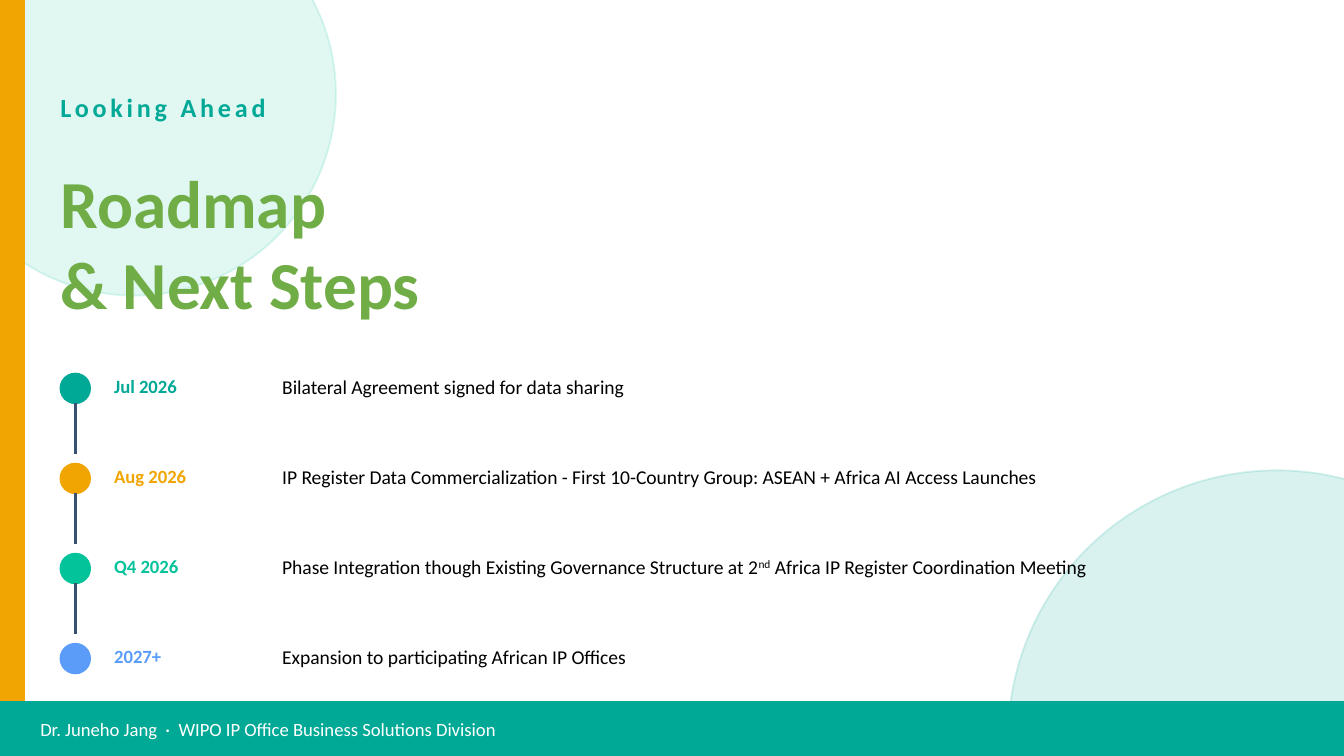
"""Build the roadmap and next steps slide."""
from lxml import etree
from pptx import Presentation
from pptx import util as u
from pptx.dml.color import RGBColor
from pptx.enum import shapes, text
from pptx.oxml.ns import qn

COLORS = {
    "teal": "00A896", "mint": "02C39A", "amber": "F0A500", "blue": "5A9CF8",
    "green": "70AD47", "slate": "3A5070", "black": "000000", "white": "FFFFFF",
}
FONT = "Calibri"
WIDTH, HEIGHT = 720, 405
LEFT = 32.4
DOT = 15.84
FIRST_ROW, ROW_STEP, ROW_HEIGHT = 194.4, 48.24, 25.2
MILESTONES = [
    ("Jul 2026", "teal", [("Bilateral Agreement signed for data sharing", 0)]),
    ("Aug 2026", "amber", [("IP Register Data Commercialization - First 10-Country Group: "
                            "ASEAN + Africa AI Access Launches", 0)]),
    ("Q4 2026", "mint", [("Phase Integration though Existing Governance Structure at 2", 0),
                         ("nd", 30),
                         (" Africa IP Register Coordination Meeting", 0)]),
    ("2027+", "blue", [("Expansion to participating African IP Offices", 0)]),
]


def rgb(color):
    return RGBColor.from_string(COLORS[color])


def add_filled(slide, kind, box, color, opacity=100):
    shape = slide.shapes.add_shape(kind, *map(u.Pt, box))
    shape.shadow.inherit = False
    shape.fill.solid()
    shape.fill.fore_color.rgb = rgb(color)
    shape.line.color.rgb = rgb(color)
    shape.line.width = u.Pt(1)
    if opacity < 100:
        for color_element in shape._element.spPr.iter(qn("a:srgbClr")):
            etree.SubElement(color_element, qn("a:alpha"), val=str(opacity * 1000))


def add_text(slide, box, paragraphs, size, color, bold=False, spacing=0):
    frame = slide.shapes.add_textbox(*map(u.Pt, box)).text_frame
    frame.word_wrap = True
    frame.vertical_anchor = text.MSO_ANCHOR.MIDDLE
    frame.margin_left = frame.margin_right = frame.margin_top = frame.margin_bottom = 0
    for index, runs in enumerate(paragraphs):
        paragraph = frame.add_paragraph() if index else frame.paragraphs[0]
        for words, baseline in runs:
            run = paragraph.add_run()
            run.text = words
            run.font.name = FONT
            run.font.size = u.Pt(size)
            run.font.bold = bold
            run.font.color.rgb = rgb(color)
            properties = run._r.get_or_add_rPr()
            if spacing:
                properties.set("spc", str(spacing * 100))
            if baseline:
                properties.set("baseline", str(baseline * 1000))


def add_link(slide, x, top, bottom):
    line = slide.shapes.add_connector(
        shapes.MSO_CONNECTOR.STRAIGHT, *map(u.Pt, (x, top, x, bottom)))
    line.line.color.rgb = rgb("slate")
    line.line.width = u.Pt(1.5)
    etree.SubElement(line._element.spPr, qn("a:effectLst"))


def add_milestone(slide, top, date, color, runs, linked):
    dot_top = top + 5.76
    add_filled(slide, shapes.MSO_SHAPE.OVAL, (LEFT, dot_top, DOT, DOT), color)
    if linked:
        dot_bottom = dot_top + DOT
        add_link(slide, LEFT + DOT / 2, dot_bottom, dot_bottom + 27.36)
    add_text(slide, (61.2, top, 86.4, ROW_HEIGHT), [[(date, 0)]], 10, color, bold=True)
    add_text(slide, (151.2, top, 540, ROW_HEIGHT), [runs], 10.5, "black")


def main():
    presentation = Presentation()
    presentation.slide_width, presentation.slide_height = u.Pt(WIDTH), u.Pt(HEIGHT)
    slide = presentation.slides.add_slide(presentation.slide_layouts[6])
    slide.background.fill.solid()
    slide.background.fill.fore_color.rgb = rgb("white")

    oval, rectangle = shapes.MSO_SHAPE.OVAL, shapes.MSO_SHAPE.RECTANGLE
    add_filled(slide, oval, (540, 252, 288, 288), "teal", opacity=15)
    add_filled(slide, oval, (-36, -57.6, 216, 216), "mint", opacity=12)
    add_filled(slide, rectangle, (0, 0, 12.96, HEIGHT), "amber")

    add_text(slide, (LEFT, 36, 360, 43.2), [[("Looking Ahead", 0)]], 14, "teal",
             bold=True, spacing=2)
    add_text(slide, (LEFT, 79.2, 432, 100.8), [[("Roadmap", 0)], [("& Next Steps", 0)]],
             36, "green", bold=True)

    for index, (date, color, runs) in enumerate(MILESTONES):
        add_milestone(slide, FIRST_ROW + index * ROW_STEP, date, color, runs,
                      linked=index < len(MILESTONES) - 1)

    add_filled(slide, rectangle, (0, 376.2, WIDTH, 28.8), "teal")
    add_text(slide, (21.6, 377.64, 648, 25.92),
             [[("Dr. Juneho Jang  ·  WIPO IP Office Business Solutions Division", 0)]],
             10, "white")
    presentation.save("out.pptx")


if __name__ == "__main__":
    main()
